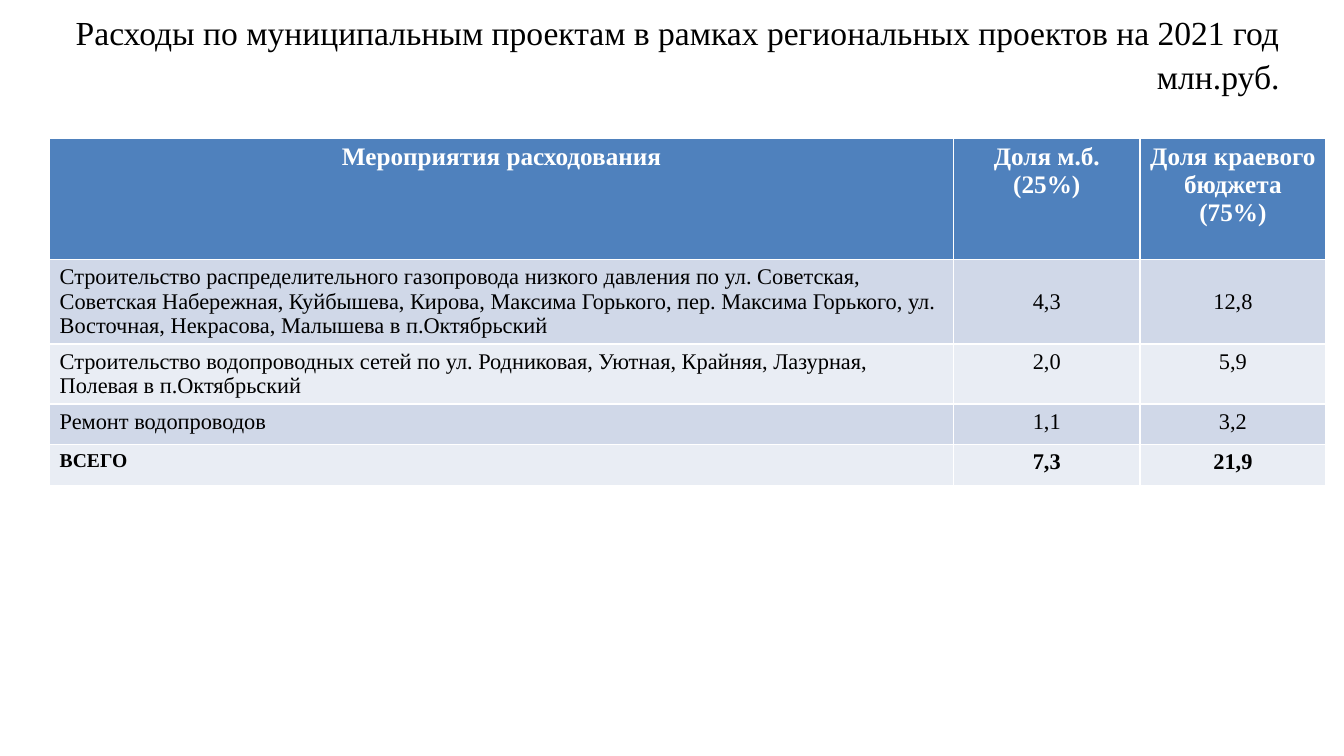
import pptx
import pptx.util
import pptx.dml.color
import pptx.enum.text

Cm, Pt = pptx.util.Cm, pptx.util.Pt
ALIGN = pptx.enum.text.PP_ALIGN
ANCHOR = pptx.enum.text.MSO_ANCHOR

FACE = "Times New Roman"
TITLE = "Расходы по муниципальным проектам в рамках региональных проектов на 2021 год\vмлн.руб."
ROWS = [
    ("Мероприятия расходования", "Доля м.б. (25%)", "Доля краевого бюджета (75%)"),
    ("Строительство распределительного газопровода низкого давления по ул. Советская, "
     "Советская Набережная, Куйбышева, Кирова, Максима Горького, пер. Максима Горького, "
     "ул. Восточная, Некрасова, Малышева в п.Октябрьский", "4,3", "12,8"),
    ("Строительство водопроводных сетей по ул. Родниковая, Уютная, Крайняя, Лазурная, "
     "Полевая в п.Октябрьский", "2,0", "5,9"),
    ("Ремонт водопроводов", "1,1", "3,2"),
    ("ВСЕГО", "7,3", "21,9"),
]
WIDTHS = [22.78, 4.7, 4.68]
HEIGHTS = [3.05, 2.14, 1.51, 1.03, 1.03]
HEAD, BANDS = "4F81BD", ("E9EDF4", "D0D8E8")
WHITE, BLACK = "FFFFFF", "000000"


def color(text):
    return pptx.dml.color.RGBColor.from_string(text)


def style(par, size, tone, align, bold=False):
    par.alignment = align
    par.font.name = FACE
    par.font.size = Pt(size)
    par.font.bold = bold
    par.font.color.rgb = color(tone)


def add_title(slide):
    title = slide.shapes.title
    title.left, title.top = Cm(1.5), Cm(-0.28)
    title.width, title.height = Cm(31), Cm(3.18)
    frame = title.text_frame
    frame.text = TITLE
    frame.auto_size = pptx.enum.text.MSO_AUTO_SIZE.NONE
    frame.vertical_anchor = ANCHOR.MIDDLE
    style(frame.paragraphs[0], 24, BLACK, ALIGN.RIGHT)
    frame.paragraphs[0].line_spacing = 1.1


def add_costs(slide):
    table = slide.shapes.add_table(
        len(ROWS), len(WIDTHS), Cm(1.25), Cm(3.48),
        Cm(sum(WIDTHS)), Cm(sum(HEIGHTS))).table
    for col, width in zip(table.columns, WIDTHS):
        col.width = Cm(width)
    for r, (row, height) in enumerate(zip(ROWS, HEIGHTS)):
        table.rows[r].height = Cm(height)
        head, total = r == 0, r == len(ROWS) - 1
        for c, text in enumerate(row):
            cell = table.cell(r, c)
            cell.text = text
            cell.fill.solid()
            cell.fill.fore_color.rgb = color(HEAD if head else BANDS[r % 2])
            if r == 1 and c > 0:
                cell.vertical_anchor = ANCHOR.MIDDLE
            size = 18 if head else 14 if total and c == 0 else 16
            align = ALIGN.CENTER if head or c > 0 else ALIGN.LEFT
            style(cell.text_frame.paragraphs[0], size,
                  WHITE if head else BLACK, align, head or total)


def main():
    deck = pptx.Presentation()
    deck.slide_width, deck.slide_height = Cm(33.87), Cm(19.05)
    slide = deck.slides.add_slide(deck.slide_layouts[5])
    add_title(slide)
    add_costs(slide)
    deck.save("out.pptx")


if __name__ == "__main__":
    main()
